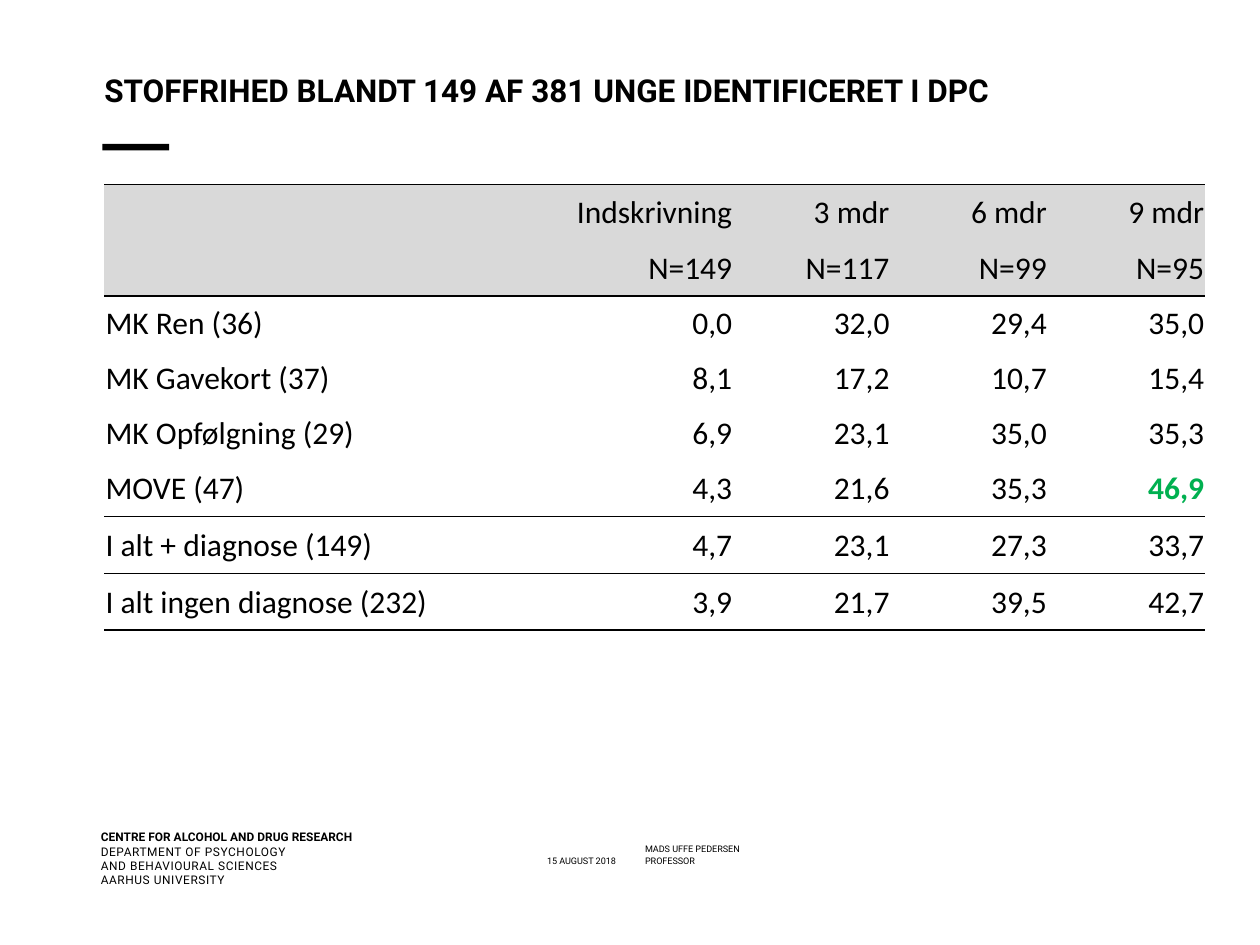
from pptx import Presentation
from pptx.dml.color import RGBColor
from pptx.enum.shapes import MSO_SHAPE
from pptx.enum.text import MSO_ANCHOR, PP_ALIGN
from pptx.util import Pt
from lxml.etree import SubElement
from pptx.oxml.ns import qn

INK, GREY, GREEN = "000000", "D9D9D9", "00B050"
WIDTHS = [245, 114.5, 89.9, 89.9, 89.9]
HEIGHTS = [31.25, 32.4, 31.25, 31.25, 31.25, 32.4, 32.4, 32.4]
ROWS = [
    ["", "Indskrivning", "3 mdr", "6 mdr", "9 mdr"],
    ["", "N=149", "N=117", "N=99", "N=95"],
    ["MK Ren (36)", "0,0", "32,0", "29,4", "35,0"],
    ["MK Gavekort (37)", "8,1", "17,2", "10,7", "15,4"],
    ["MK Opfølgning (29)", "6,9", "23,1", "35,0", "35,3"],
    ["MOVE (47)", "4,3", "21,6", "35,3", "46,9"],
    ["I alt + diagnose (149)", "4,7", "23,1", "27,3", "33,7"],
    ["I alt ingen diagnose (232)", "3,9", "21,7", "39,5", "42,7"],
]
RULED = {0, 2, 6, 7, 8}
BEST = (5, 4)


def color(code):
    """Turn a hex string into a colour."""
    return RGBColor.from_string(code)


class Deck:
    """Hold the style and the current slide."""

    def __init__(self, slide, font, body):
        """Keep the slide, the text font and the table font."""
        self.slide, self.font, self.body = slide, font, body

    def style(self, para, font, size, bold=False, ink=INK, track=0):
        """Format every run of a paragraph."""
        for run in para.runs:
            run.font.name, run.font.size = font, Pt(size)
            run.font.bold = bold
            run.font.color.rgb = color(ink)
            if track:
                run.font._element.set("spc", str(track))

    def text(self, words, box, size, lead=None, wrap=True,
             align=PP_ALIGN.LEFT, **look):
        """Add a text box without insets."""
        frame = self.slide.shapes.add_textbox(*map(Pt, box)).text_frame
        frame.word_wrap = wrap
        frame.margin_left = frame.margin_right = 0
        frame.margin_top = frame.margin_bottom = 0
        frame.text = words
        para = frame.paragraphs[0]
        para.alignment = align
        if lead:
            para.line_spacing = lead
        self.style(para, self.font, size, **look)

    def bar(self, box, fill):
        """Add a plain filled rectangle."""
        bar = self.slide.shapes.add_shape(MSO_SHAPE.RECTANGLE, *map(Pt, box))
        bar.shadow.inherit = False
        bar.fill.solid()
        bar.fill.fore_color.rgb = color(fill)
        bar.line.fill.background()

    def edge(self, cell, side, shown):
        """Draw or clear one border of a cell."""
        props = cell._tc.get_or_add_tcPr()
        line = SubElement(props, qn("a:ln" + side), w=str(Pt(1)))
        if shown:
            fill = SubElement(line, qn("a:solidFill"))
            SubElement(fill, qn("a:srgbClr"), val=INK)
        else:
            SubElement(line, qn("a:noFill"))

    def cell(self, cell, words, row, col):
        """Fill in and format one table cell."""
        for side, shown in (("L", False), ("R", False),
                            ("T", row in RULED), ("B", row + 1 in RULED)):
            self.edge(cell, side, shown)
        if row < 2:
            cell.fill.solid()
            cell.fill.fore_color.rgb = color(GREY)
        else:
            cell.fill.background()
        cell.margin_left = cell.margin_right = cell.margin_top = Pt(0.72)
        cell.margin_bottom = 0
        cell.vertical_anchor = MSO_ANCHOR.MIDDLE
        cell.text_frame.text = words
        para = cell.text_frame.paragraphs[0]
        para.alignment = PP_ALIGN.RIGHT if col else PP_ALIGN.LEFT
        best = (row, col) == BEST
        self.style(para, self.body, 18, best, GREEN if best else INK)

    def table(self, left, top):
        """Add the table of results."""
        size = left, top, sum(WIDTHS), sum(HEIGHTS)
        grid = self.slide.shapes.add_table(
            len(ROWS), len(WIDTHS), *map(Pt, size)).table
        grid.first_row = grid.horz_banding = False
        for col, width in zip(grid.columns, WIDTHS):
            col.width = Pt(width)
        for row, height in zip(grid.rows, HEIGHTS):
            row.height = Pt(height)
        for row, line in enumerate(ROWS):
            for col, words in enumerate(line):
                self.cell(grid.cell(row, col), words, row, col)


def main():
    """Build and save the slide."""
    show = Presentation()
    show.slide_width, show.slide_height = Pt(720), Pt(540)
    deck = Deck(show.slides.add_slide(show.slide_layouts[6]),
                "Roboto", "Calibri")
    base, step = 489, 7
    deck.text("MADS UFFE PEDERSEN", (368.6, base - step, 176.4, step), 5.2)
    deck.text("15 AUGUST 2018", (218.2, base, 133.9, step), 5.2,
              align=PP_ALIGN.RIGHT)
    deck.text("PROFESSOR", (368.6, base, 176.4, step), 5.2)
    deck.text("DEPARTMENT OF PSYCHOLOGY\vAND BEHAVIOURAL SCIENCES\v"
              "AARHUS UNIVERSITY", (57.6, 482.4, 139, 25), 6.8, track=30)
    deck.text("CENTRE FOR ALCOHOL AND DRUG RESEARCH",
              (57.6, 474, 144.7, 8.4), 6.8, wrap=False, bold=True)
    deck.bar((58.5, 82.2, 38.2, 3.8), INK)
    deck.text("STOFFRIHED BLANDT 149 AF 381 UNGE IDENTIFICERET I DPC",
              (59.6, 43.2, 641.5, 33.8), 18, lead=0.89, bold=True)
    deck.table(59.6, 105.5)
    show.save("out.pptx")


if __name__ == "__main__":
    main()
